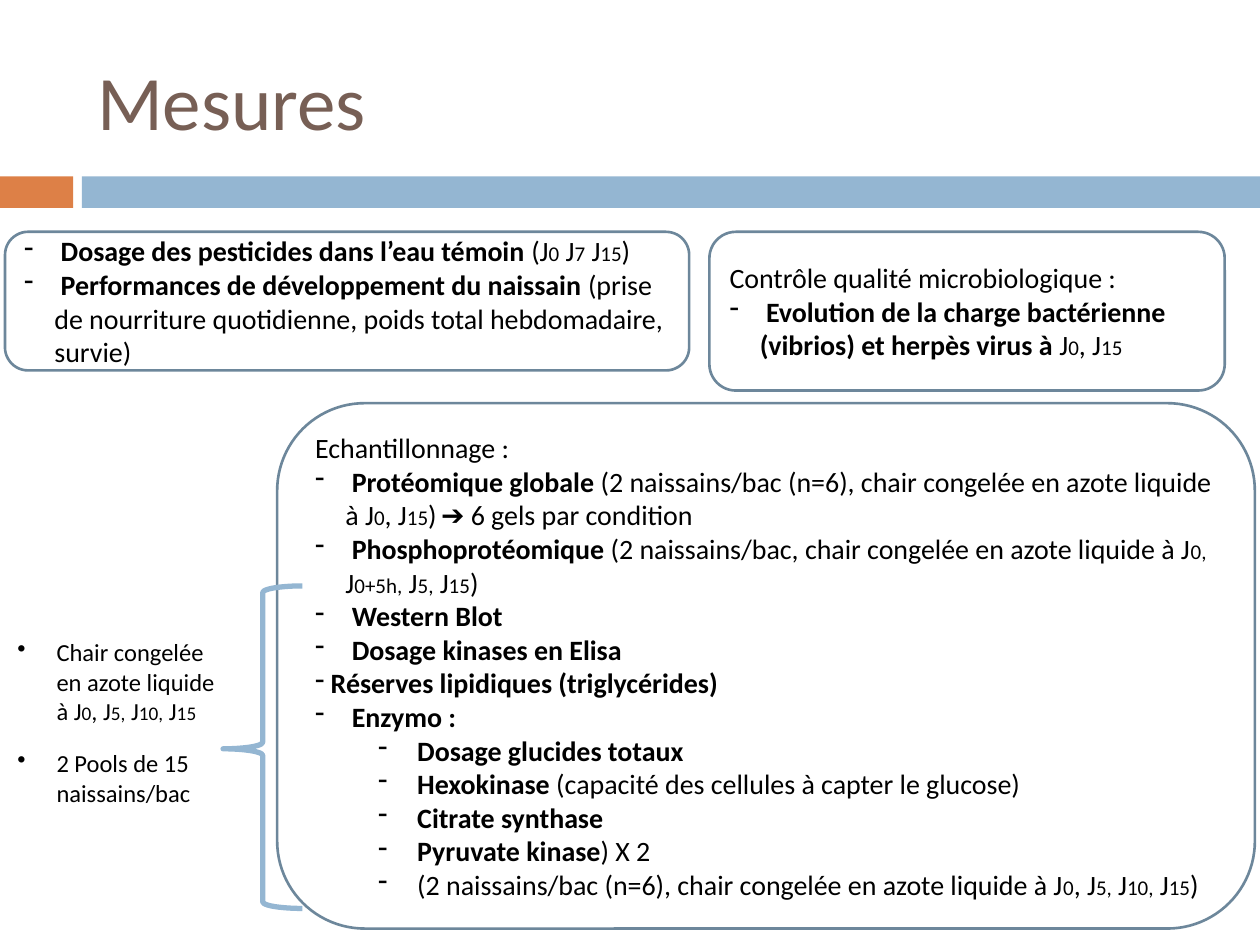
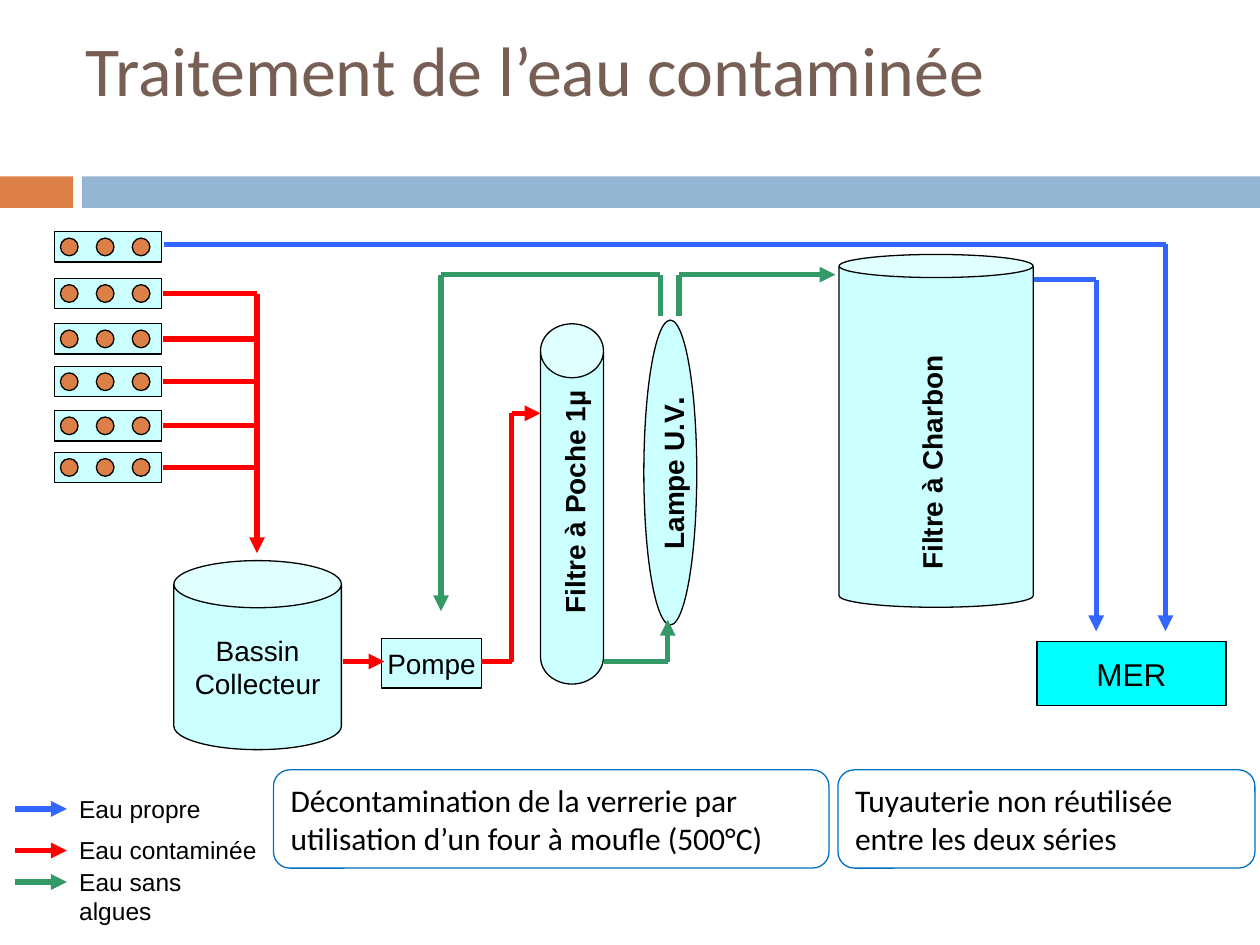
"""Build two slides on water measurements and contaminated water treatment."""
from collections import namedtuple

from lxml import etree
from pptx import Presentation, util as u
from pptx.dml.color import RGBColor
from pptx.enum import shapes, text
from pptx.oxml import ns

ORANGE = RGBColor(0xDD, 0x80, 0x47)
BAND_BLUE = RGBColor(0x94, 0xB6, 0xD2)
BROWN = RGBColor(0x77, 0x5F, 0x55)
SLATE = RGBColor(0x6D, 0x87, 0x9B)
FRAME_BLUE = RGBColor(0x00, 0x70, 0xC0)
BLACK = RGBColor(0x00, 0x00, 0x00)
PALE_CYAN = RGBColor(0xCC, 0xFF, 0xFF)
SEA = RGBColor(0x00, 0xFF, 0xFF)
CLEAN = RGBColor(0x33, 0x66, 0xFF)
DIRTY = RGBColor(0xFF, 0x00, 0x00)
ALGAE_FREE = RGBColor(0x33, 0x99, 0x66)

COLUMNS, ROWS = 100, 75
KIND = shapes.MSO_SHAPE
MIDDLE, TOP = text.MSO_ANCHOR.MIDDLE, text.MSO_ANCHOR.TOP
LEFT, CENTER = text.PP_ALIGN.LEFT, text.PP_ALIGN.CENTER

Bullet = namedtuple("Bullet", "symbol margin hang")
PLAIN = Bullet(None, 0, 0)
DASH = Bullet("-", 2.4, 2.4)
TIGHT_DASH = Bullet("-", 0, 0)
SUB_DASH = Bullet("-", 8.1, 3.1)
DOT = Bullet("•", 3.1, 3.1)


class Deck:
    """Holds the shared style and the current slide; lengths are grid columns and rows."""

    def __init__(self):
        self.presentation = Presentation()
        self.presentation.slide_width = u.Inches(10)
        self.presentation.slide_height = u.Inches(7.5)
        self.column = self.presentation.slide_width / COLUMNS
        self.row = self.presentation.slide_height / ROWS
        self.slide = None

    def area(self, left, top, width, height):
        """Turn a grid area into slide lengths."""
        return (round(left * self.column), round(top * self.row),
                round(width * self.column), round(height * self.row))

    def new_slide(self, title, left, top, size):
        """Start a slide with the two bands and a title."""
        self.slide = self.presentation.slides.add_slide(self.presentation.slide_layouts[5])
        self.shape(KIND.RECTANGLE, (0, 14, 5.8, 2.5), fill=ORANGE)
        self.shape(KIND.RECTANGLE, (6.5, 14, 93.5, 2.5), fill=BAND_BLUE)
        heading = self.slide.shapes.title
        heading.left, heading.top, heading.width, heading.height = self.area(left, top, 89.2, 10.8)
        self.set_lines(heading, [title], size, color=BROWN)

    def shape(self, kind, area, fill=None, line=None, weight=0.75, adjust=(), parent=None):
        """Add a preset shape to the slide or to a group."""
        shape = (parent or self.slide).shapes.add_shape(kind, *self.area(*area))
        shape.shadow.inherit = False
        if fill is None:
            shape.fill.background()
        else:
            shape.fill.solid()
            shape.fill.fore_color.rgb = fill
        if line is None:
            shape.line.fill.background()
        else:
            shape.line.color.rgb = line
            shape.line.width = u.Pt(weight)
        for index, value in enumerate(adjust):
            shape.adjustments[index] = value
        return shape

    def vessel(self, kind, area, lines=(), fill=PALE_CYAN, size=16, adjust=()):
        """Add an outlined piece of equipment with an optional centred label."""
        shape = self.shape(kind, area, fill, BLACK, adjust=adjust)
        if lines:
            self.set_lines(shape, lines, size, font="Arial", align=CENTER, wrap=False)

    def panel(self, area, lines, size=16, line=SLATE, weight=1.5, anchor=MIDDLE):
        """Add a rounded frame with text."""
        shape = self.shape(KIND.ROUNDED_RECTANGLE, area, None, line, weight)
        self.set_lines(shape, lines, size, small=12, anchor=anchor)

    def label(self, area, lines, size, turn=0, **style):
        """Add a text box, turned if asked."""
        box = self.slide.shapes.add_textbox(*self.area(*area))
        box.rotation = turn
        self.set_lines(box, lines, size, anchor=TOP, **style)

    def set_lines(self, shape, lines, size, small=12, font="Calibri", color=BLACK,
                  align=LEFT, anchor=MIDDLE, wrap=True, gap=0):
        """Fill a shape with lines, where *...* is bold and ~...~ takes the second size."""
        frame = shape.text_frame
        frame.word_wrap = wrap
        frame.vertical_anchor = anchor
        for index, line in enumerate(lines):
            bullet, words = (PLAIN, line) if isinstance(line, str) else line
            paragraph = frame.add_paragraph() if index else frame.paragraphs[0]
            paragraph.alignment = align
            paragraph.space_before = u.Pt(gap if index else 0)
            self.bullet(paragraph, bullet)
            for bold, segment in enumerate(words.split("*")):
                for second, piece in enumerate(segment.split("~")):
                    if piece:
                        run = paragraph.add_run()
                        run.text = piece
                        run.font.name = font
                        run.font.size = u.Pt(small if second % 2 else size)
                        run.font.bold = bold % 2 == 1
                        run.font.color.rgb = color

    def bullet(self, paragraph, bullet):
        """Set the indent and the bullet sign of a paragraph."""
        properties = paragraph._p.get_or_add_pPr()
        properties.set("marL", str(round(bullet.margin * self.column)))
        properties.set("indent", str(round(-bullet.hang * self.column)))
        if bullet.symbol:
            etree.SubElement(properties, ns.qn("a:buChar")).set("char", bullet.symbol)

    def pipe(self, color, *points, arrow=True):
        """Join points with straight connectors, the last one with an arrowhead if asked."""
        for number, (start, end) in enumerate(zip(points, points[1:]), 2):
            ends = self.area(*start, *end)
            connector = self.slide.shapes.add_connector(shapes.MSO_CONNECTOR.STRAIGHT, *ends)
            connector.line.color.rgb = color
            connector.line.width = u.Pt(3)
            if arrow and number == len(points):
                outline = connector.line._get_or_add_ln()
                etree.SubElement(outline, ns.qn("a:tailEnd")).set("type", "triangle")
            etree.SubElement(connector._element.spPr, ns.qn("a:effectLst"))

    def tank(self, left, top):
        """Add a grouped tray with three round basins."""
        group = self.slide.shapes.add_group_shape()
        self.shape(KIND.RECTANGLE, (left, top, 8.5, 2.4), PALE_CYAN, BLACK, parent=group)
        for basin in range(3):
            area = (left + 0.5 + 2.85 * basin, top + 0.5, 1.4, 1.4)
            self.shape(KIND.OVAL, area, ORANGE, BLACK, parent=group)


def build_measures(deck):
    """Build the slide that lists the measurements."""
    deck.new_slide("Mesures", 6.7, 2.5, 44)
    deck.panel((22, 32, 77.6, 41.7), [
        "Echantillonnage :",
        (DASH, "* Protéomique globale* (2 naissains/bac (n=6), chair congelée en azote liquide "
               "à J~0~, J~15~)\t➔ 6 gels par condition"),
        (DASH, " *Phosphoprotéomique *(2 naissains/bac, chair congelée en azote liquide "
               "à J~0, ~J~0+5h,~ J~5,~ J~15~)"),
        (DASH, "* Western Blot*"),
        (DASH, "* Dosage kinases en Elisa*"),
        (TIGHT_DASH, "* Réserves lipidiques (triglycérides)*"),
        (DASH, "* Enzymo :*"),
        (SUB_DASH, "*Dosage glucides totaux*"),
        (SUB_DASH, "*Hexokinase* (capacité des cellules à capter le glucose)"),
        (SUB_DASH, "*Citrate synthase*"),
        (SUB_DASH, "*Pyruvate kinase*) X 2"),
        (SUB_DASH, "(2 naissains/bac (n=6), chair congelée en azote liquide "
                   "à J~0~, J~5,~ J~10,~ J~15~)"),
    ])
    deck.panel((0.4, 18.4, 54.3, 11), [
        (DASH, "* Dosage des pesticides dans l’eau témoin *(J~0~ J~7~ J~15~)"),
        (DASH, " *Performances de développement du naissain *(prise de nourriture "
               "quotidienne, poids total hebdomadaire, survie)"),
    ])
    deck.panel((56.3, 18.4, 40.9, 12.6), [
        "Contrôle qualité microbiologique :",
        (DASH, "* Evolution de la charge bactérienne (vibrios) et herpès virus à *J~0~, J~15~"),
    ])
    brace = deck.shape(KIND.RIGHT_BRACE, (17.7, 46.5, 6.3, 25.6), None, BAND_BLUE, 3,
                       (0.083, 0.495))
    brace.rotation = 180
    deck.label((0.4, 50.1, 18.9, 14.6), [
        (DOT, "Chair congelée en azote liquide à J~0~, J~5,~ J~10,~ J~15~"),
        (DOT, "2 Pools de 15 naissains/bac"),
    ], 14, small=11, gap=13)


def build_treatment(deck):
    """Build the flow diagram of the contaminated water."""
    deck.new_slide("Traitement de l’eau contaminée", 5.8, 0, 40)

    tank_left, collector = 4.3, 20.4
    clean_tank, *dirty_tanks = 18.4, 22.1, 25.7, 29.1, 32.6, 35.9
    deck.tank(tank_left, clean_tank)
    for top in dirty_tanks:
        deck.tank(tank_left, top)
        deck.pipe(DIRTY, (12.9, top + 1.2), (collector, top + 1.2), arrow=False)
    deck.pipe(DIRTY, (collector, dirty_tanks[0] + 1.2), (collector, 43.9))

    deck.vessel(KIND.CAN, (13.8, 44.5, 13.3, 15), ["Bassin", "Collecteur"], adjust=(0.281,))
    deck.vessel(KIND.RECTANGLE, (30.3, 50.7, 7.9, 3.9), ["Pompe"])
    deck.vessel(KIND.CAN, (42.9, 25.7, 5, 28.6), adjust=(0.857,))
    deck.vessel(KIND.OVAL, (51.1, 25.4, 4.2, 24.2))
    deck.vessel(KIND.CAN, (66.6, 20.2, 15.4, 28), adjust=(0.119,))
    deck.vessel(KIND.RECTANGLE, (82.3, 50.9, 15, 5.1), ["MER"], SEA, 18)

    for area, name in (((35.6, 37.8, 20, 3.7), "*Filtre à Poche 1µ*"),
                       ((45.8, 35.1, 15, 4), "*Lampe U.V~.~*"),
                       ((63.3, 33.7, 21.3, 3.7), "*Filtre à Charbon*")):
        deck.label(area, [name], 16, 270, small=18, font="Arial")

    pump_axis, lamp_top = 52.5, 21.8
    deck.pipe(DIRTY, (27.2, pump_axis), (30.5, pump_axis))
    deck.pipe(DIRTY, (38.2, pump_axis), (40.6, pump_axis), (40.6, 32.8), (42.9, 32.8))
    deck.pipe(ALGAE_FREE, (47.9, pump_axis), (53, pump_axis), (53, 49.2))
    deck.pipe(ALGAE_FREE, (52.4, 25.1), (52.4, lamp_top), (35, lamp_top), (35, 48.5))
    deck.pipe(ALGAE_FREE, (53.9, 25.1), (53.9, lamp_top), (66.3, lamp_top))
    deck.pipe(CLEAN, (82.1, 22.2), (87, 22.2), (87, 50.1))
    deck.pipe(CLEAN, (13, 19.4), (92.5, 19.4), (92.5, 50.1))

    for color, name, top, width, axis in (
            (CLEAN, "Eau propre", 62.5, 13.3, 64.2),
            (DIRTY, "Eau contaminée", 65.8, 20, 67.5),
            (ALGAE_FREE, "Eau sans algues", 68.3, 15.2, 70)):
        deck.label((5.3, top, width, 3.3), [name], 14, font="Arial")
        deck.pipe(color, (1.2, axis), (5.3, axis))

    for left, width, note in (
            (21.7, 44.1, "Décontamination de la verrerie par utilisation d’un four "
                         "à moufle (500°C)"),
            (66.5, 33.1, "Tuyauterie non réutilisée entre les deux séries")):
        deck.panel((left, 61.1, width, 7.8), [note], 18, FRAME_BLUE, 0.75, TOP)


def main():
    """Build both slides and save the file."""
    deck = Deck()
    build_measures(deck)
    build_treatment(deck)
    deck.presentation.save("out.pptx")


if __name__ == "__main__":
    main()
